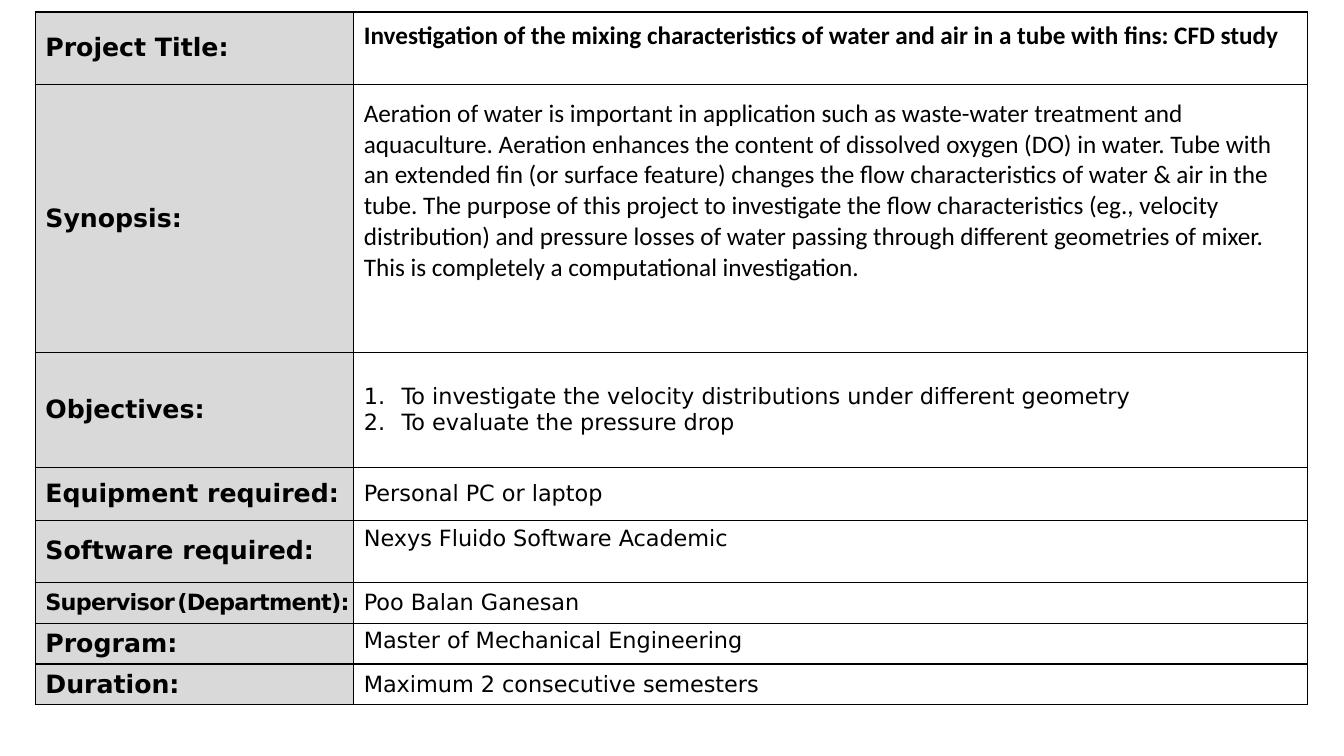
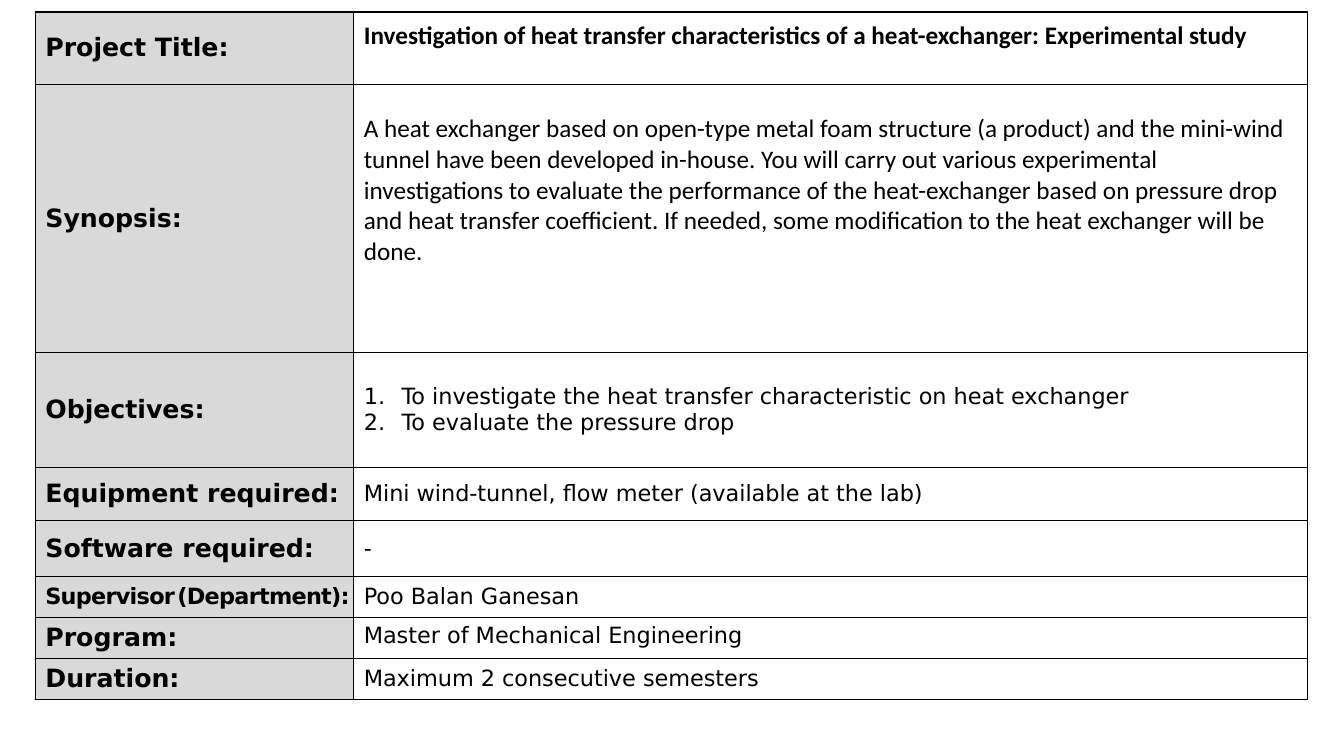
"""Build two project description slides, each a two-column table."""
from dataclasses import dataclass

from lxml.etree import SubElement
from pptx import Presentation
from pptx.dml.color import RGBColor
from pptx.enum.text import MSO_ANCHOR
from pptx.oxml import parse_xml
from pptx.oxml.ns import qn
from pptx.util import Pt

NS = "http://schemas.openxmlformats.org/drawingml/2006/main"
BLACK, GREY = "000000", "D9D9D9"
SANS, BODY = "DejaVu Sans", "Calibri"
LEFT, TOP = 25.2, 8.6
COLS = (227.5, 681)
INDENT = 27


@dataclass(frozen=True)
class Part:
    """A run of text with its size and letter spacing."""
    text: str
    size: float
    gap: float = 0


@dataclass(frozen=True)
class Row:
    """A table row: its label, its value lines and their format."""
    label: str
    lines: tuple[str, ...]
    height: float
    font: str = SANS
    size: float = 16
    bold: bool = False
    pad: float = 0
    number: bool = False
    anchor: MSO_ANCHOR = MSO_ANCHOR.MIDDLE


@dataclass(frozen=True)
class Project:
    """The facts that differ between the slides."""
    title: str
    about: str
    goals: tuple[str, ...]
    tools: str
    software: str
    height: float
    pad: float = 0


TIGHT = "Supervisor (Department):"
PARTS = (Part("Supervisor", 16, -0.5), Part(" ", 5, -0.5), Part("(Department):", 16, -0.5))

PROJECTS = (
    Project(
        "Investigation of the mixing characteristics of water and air in a tube with fins: CFD study",
        "Aeration of water is important in application such as waste-water treatment and "
        "aquaculture. Aeration enhances the content of dissolved oxygen (DO) in water. Tube with "
        "an extended fin (or surface feature) changes the flow characteristics of water & air in "
        "the tube. The purpose of this project to investigate the flow characteristics (eg., "
        "velocity distribution) and pressure losses of water passing through different geometries "
        "of mixer. This is completely a computational investigation.",
        ("To investigate the velocity distributions under different geometry",
         "To evaluate the pressure drop"),
        "Personal PC or laptop", "Nexys Fluido Software Academic", 44.4, 18),
    Project(
        "Investigation of heat transfer characteristics of a heat-exchanger: Experimental study",
        "A heat exchanger based on open-type metal foam structure (a product) and the mini-wind "
        "tunnel have been developed in-house. You will carry out various experimental "
        "investigations to evaluate the performance of the heat-exchanger based on pressure drop "
        "and heat transfer coefficient. If needed, some modification to the heat exchanger will "
        "be done.",
        ("To investigate the heat transfer characteristic on heat exchanger",
         "To evaluate the pressure drop"),
        "Mini wind-tunnel, flow meter (available at the lab)", "-", 40.3),
)


def color(code: str) -> RGBColor:
    """Turn a hex string into a colour."""
    return RGBColor.from_string(code)


def style(run, font: str, size: float, bold: bool, gap: float = 0) -> None:
    """Format one run."""
    run.font.name = font
    run.font.size = Pt(size)
    run.font.bold = bold
    run.font.color.rgb = color(BLACK)
    if gap:
        run._r.get_or_add_rPr().set("spc", str(round(gap * 100)))


def border(cell) -> None:
    """Draw a black line on each side of a cell."""
    props = cell._tc.get_or_add_tcPr()
    for spot, side in enumerate("LRTB"):
        props.insert(spot, parse_xml(
            f'<a:ln{side} xmlns:a="{NS}" w="{Pt(1)}"><a:solidFill>'
            f'<a:srgbClr val="{BLACK}"/></a:solidFill></a:ln{side}>'))


def count(line) -> None:
    """Number a paragraph with a hanging indent."""
    props = line._p.get_or_add_pPr()
    props.set("marL", str(Pt(INDENT)))
    props.set("indent", str(-Pt(INDENT)))
    SubElement(props, qn("a:buFont")).set("typeface", "+mj-lt")
    SubElement(props, qn("a:buAutoNum")).set("type", "arabicPeriod")


def head(cell, label: str) -> None:
    """Fill the label cell of a row."""
    cell.fill.solid()
    cell.fill.fore_color.rgb = color(GREY)
    cell.vertical_anchor = MSO_ANCHOR.MIDDLE
    tight = label == TIGHT
    if tight:
        cell.margin_right = Pt(0)
    line = cell.text_frame.paragraphs[0]
    for part in PARTS if tight else (Part(label, 18),):
        run = line.add_run()
        run.text = part.text
        style(run, SANS, part.size, True, part.gap)
    border(cell)


def value(cell, row: Row) -> None:
    """Fill the value cell of a row."""
    cell.fill.background()
    cell.vertical_anchor = row.anchor
    cell.margin_bottom = Pt(3.6 + row.pad)
    cell.text_frame.text = "\n".join(row.lines)
    for line in cell.text_frame.paragraphs:
        if row.number:
            count(line)
        for run in line.runs:
            style(run, row.font, row.size, row.bold)
    border(cell)


def plan(job: Project) -> tuple[Row, ...]:
    """List the rows of a project."""
    return (
        Row("Project Title:", (job.title,), 51.8, BODY, 18, True, 18),
        Row("Synopsis:", (job.about,), 191.5, BODY, 18, pad=40),
        Row("Objectives:", job.goals, 82.2, number=True),
        Row("Equipment required:", (job.tools,), 37.5),
        Row("Software required:", (job.software,), job.height, pad=job.pad),
        Row(TIGHT, ("Poo Balan Ganesan",), 29.2),
        Row("Program:", ("Master of Mechanical Engineering",), 29.2, anchor=MSO_ANCHOR.TOP),
        Row("Duration:", ("Maximum 2 consecutive semesters",), 29.2),
    )


def draw(deck, job: Project) -> None:
    """Add one project slide."""
    slide = deck.slides.add_slide(deck.slide_layouts[6])
    rows = plan(job)
    tall = sum(row.height for row in rows)
    grid = slide.shapes.add_table(
        len(rows), len(COLS), Pt(LEFT), Pt(TOP), Pt(sum(COLS)), Pt(tall)).table
    grid.first_row = grid.horz_banding = False
    for col, width in zip(grid.columns, COLS):
        col.width = Pt(width)
    for spot, row in enumerate(rows):
        grid.rows[spot].height = Pt(row.height)
        head(grid.cell(spot, 0), row.label)
        value(grid.cell(spot, 1), row)


def main() -> None:
    """Build and save the deck."""
    deck = Presentation()
    deck.slide_width, deck.slide_height = Pt(960), Pt(540)
    for job in PROJECTS:
        draw(deck, job)
    deck.save("out.pptx")


if __name__ == "__main__":
    main()
